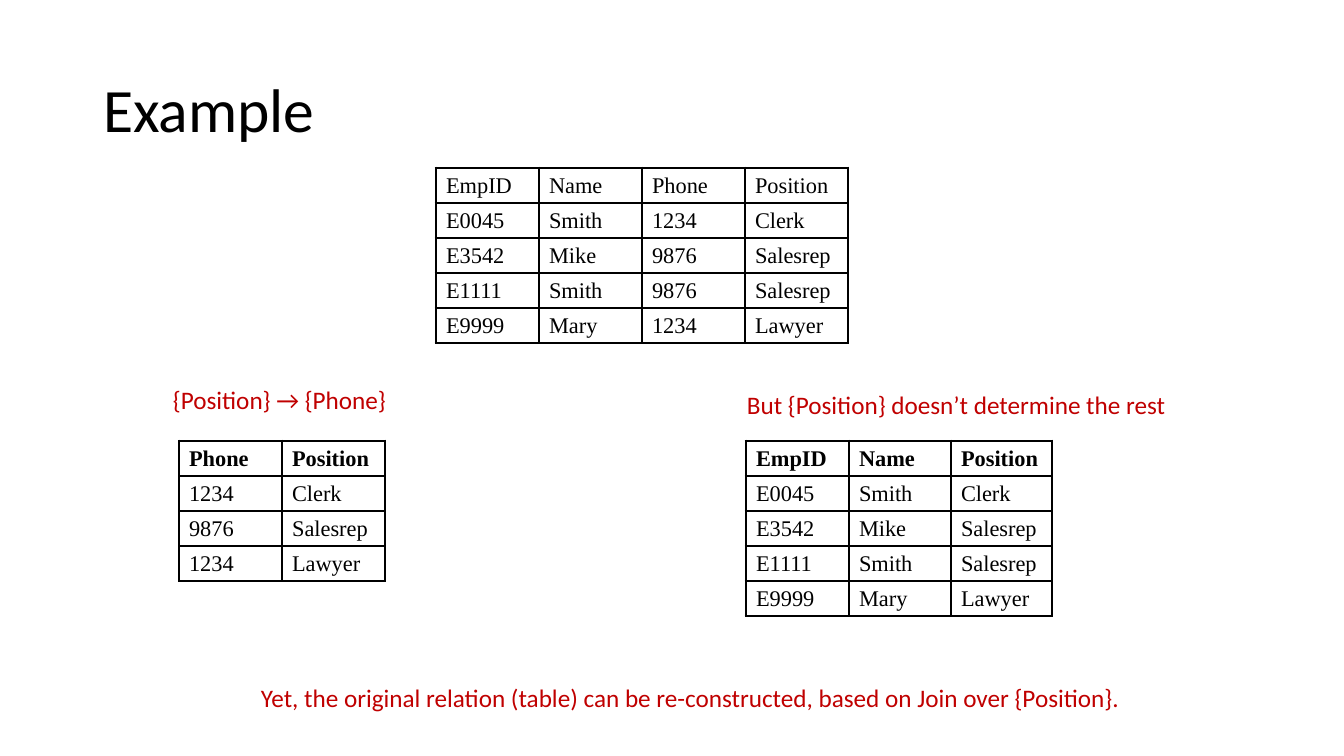
from lxml import etree
from pptx import Presentation
from pptx import util as u
from pptx.dml.color import RGBColor
from pptx.enum import text
from pptx.oxml.ns import qn

PX = 914400 / 100.8
THIN, THICK = 1, 2.25
BLACK, RED = "000000", "C00000"
TITLE = {"name": "Calibri", "size": u.Pt(44), "bold": False}
NOTE = {"name": "Calibri", "size": u.Pt(18)}
CELL = {"name": "Times New Roman", "size": u.Pt(16)}
ROW = 35

STAFF = [
    ["EmpID", "Name", "Phone", "Position"],
    ["E0045", "Smith", "1234", "Clerk"],
    ["E3542", "Mike", "9876", "Salesrep"],
    ["E1111", "Smith", "9876", "Salesrep"],
    ["E9999", "Mary", "1234", "Lawyer"],
]
PHONES = [row[2:] for row in STAFF if row[0] != "E1111"]
NAMES = [row[:2] + row[3:] for row in STAFF]

NOTES = [
    ("{Position} → {Phone}", 163, 379, 238),
    ("But {Position} doesn’t determine the rest", 737, 384, 444),
    ("Yet, the original relation (table) can be re-constructed, "
     "based on Join over {Position}.", 251, 677, 884),
]


def px(*sizes):
    return [u.Emu(round(size * PX)) for size in sizes]


def style(font, values, color):
    for key, value in values.items():
        setattr(font, key, value)
    font.color.rgb = RGBColor.from_string(color)


def place(shape, *box):
    shape.left, shape.top, shape.width, shape.height = px(*box)


def add_title(slide, words):
    title = slide.shapes.title
    place(title, 93, 40, 1159, 146)
    frame = title.text_frame
    frame.text = words
    frame.vertical_anchor = text.MSO_ANCHOR.MIDDLE
    para = frame.paragraphs[0]
    para.alignment = text.PP_ALIGN.LEFT
    para.line_spacing = 0.9
    style(para.runs[0].font, TITLE, BLACK)


def add_note(slide, words, left, top, width):
    frame = slide.shapes.add_textbox(*px(left, top, width, 40)).text_frame
    frame.text = words
    frame.word_wrap = False
    frame.auto_size = text.MSO_AUTO_SIZE.SHAPE_TO_FIT_TEXT
    style(frame.paragraphs[0].runs[0].font, NOTE, RED)


def set_edges(cell, widths):
    """Draw the cell's borders; widths maps L, R, T and B to points."""
    props = cell._tc.get_or_add_tcPr()
    for spot, side in enumerate("LRTB"):
        line = etree.Element(qn(f"a:ln{side}"), w=str(u.Pt(widths[side])))
        fill = etree.SubElement(line, qn("a:solidFill"))
        etree.SubElement(fill, qn("a:srgbClr"), val=BLACK)
        props.insert(spot, line)


def add_grid(slide, rows, left, top, cols, sides, bold=True):
    """Add a table; sides holds the widths of its left and right edges."""
    count, last = len(rows), len(cols) - 1
    grid = slide.shapes.add_table(
        count, len(cols), *px(left, top, sum(cols), ROW * count)).table
    grid.first_row = grid.horz_banding = False
    for col, width in zip(grid.columns, px(*cols)):
        col.width = width
    for r, row in enumerate(rows):
        grid.rows[r].height = px(ROW)[0]
        for c, words in enumerate(row):
            cell = grid.cell(r, c)
            cell.text = words
            cell.fill.background()
            font = cell.text_frame.paragraphs[0].runs[0].font
            style(font, {**CELL, "bold": bold and r == 0}, BLACK)
            set_edges(cell, {
                "L": sides[0] if c == 0 else THIN,
                "R": sides[1] if c == last else THIN,
                "T": THICK if r < 2 else THIN,
                "B": THICK if r in (0, count - 1) else THIN,
            })


def main():
    deck = Presentation()
    deck.slide_width, deck.slide_height = px(1344, 756)
    slide = deck.slides.add_slide(deck.slide_layouts.get_by_name("Title Only"))
    add_title(slide, "Example")
    add_grid(slide, STAFF, 436, 168, [103] * 4, (THICK, THICK), bold=False)
    add_grid(slide, PHONES, 179, 441, [103] * 2, (THIN, THICK))
    add_grid(slide, NAMES, 746, 441, [103, 102, 101], (THICK, THIN))
    for note in NOTES:
        add_note(slide, *note)
    deck.save("out.pptx")


if __name__ == "__main__":
    main()
